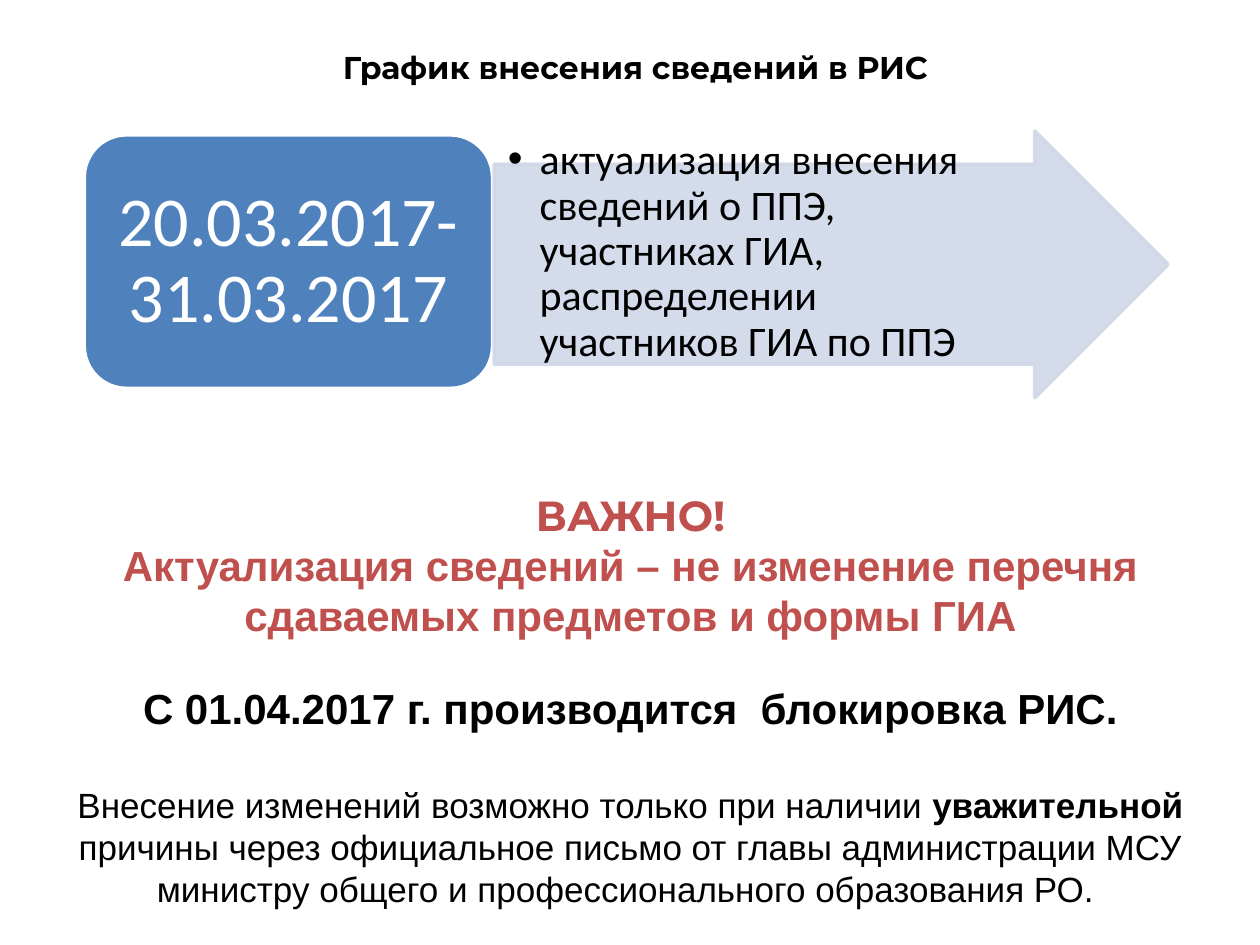
"""Build the slide with the schedule for entering data into the RIS."""
from lxml import etree
from pptx import Presentation
from pptx import util as u
from pptx.dml.color import RGBColor
from pptx.enum import shapes, text
from pptx.oxml import ns

BLACK, WHITE, BLUE, PALE, RED = "000000", "FFFFFF", "4F81BD", "D0D8E8", "C0504D"


def colour(value):
    return RGBColor.from_string(value)


class SlideWriter:
    def __init__(self, deck):
        self.page = deck.slides.add_slide(deck.slide_layouts[5])

    def place(self, box, area):
        box.left, box.top, box.width, box.height = [u.Cm(v) for v in area]

    def frame(self, box, margins, anchor, auto=text.MSO_AUTO_SIZE.NONE):
        frame = box.text_frame
        frame.word_wrap = True
        frame.auto_size = auto
        frame.vertical_anchor = anchor
        (frame.margin_left, frame.margin_top,
         frame.margin_right, frame.margin_bottom) = [u.Cm(v) for v in margins]
        return frame

    def span(self, para, words, size, font="Arial", tint=BLACK, bold=False):
        span = para.add_run()
        span.text = words
        span.font.size = u.Pt(size)
        span.font.name = font
        span.font.bold = bold
        span.font.color.rgb = colour(tint)

    def title(self, words, area):
        box = self.page.shapes.title
        self.place(box, area)
        frame = self.frame(box, (0.25, 0.13, 0.25, 0.13), text.MSO_ANCHOR.TOP)
        para = frame.paragraphs[0]
        para.alignment = text.PP_ALIGN.CENTER
        self.span(para, words, 18, "Montserrat", bold=True)

    def shape(self, kind, area, fill, line, margins, alpha=None):
        box = self.page.shapes.add_shape(kind, *[u.Cm(v) for v in area])
        box.shadow.inherit = False
        box.fill.solid()
        box.fill.fore_color.rgb = colour(fill)
        box.line.color.rgb = colour(line)
        box.line.width = u.Pt(2)
        if alpha:
            for tint in box._element.spPr.iter(ns.qn("a:srgbClr")):
                etree.SubElement(tint, ns.qn("a:alpha"), val=str(alpha * 1000))
        para = self.frame(box, margins, text.MSO_ANCHOR.MIDDLE).paragraphs[0]
        para.line_spacing = 0.9
        return box, para

    def period(self, words, area):
        margins = (0.43, 0.2, 0.43, 0.2)
        box, para = self.shape(shapes.MSO_SHAPE.ROUNDED_RECTANGLE, area, BLUE, WHITE, margins)
        para.alignment = text.PP_ALIGN.CENTER
        self.span(para, words, 40, "Calibri", WHITE)

    def arrow(self, words, area):
        margins = (0.28, 0.05, 1.78, 0.56)
        box, para = self.shape(shapes.MSO_SHAPE.RIGHT_ARROW, area, PALE, PALE, margins, 90)
        box.adjustments[0], box.adjustments[1] = 0.75, 0.5
        para.alignment = text.PP_ALIGN.LEFT
        props = para._p.get_or_add_pPr()
        props.set("marL", str(u.Cm(0.64)))
        props.set("indent", str(-u.Cm(0.64)))
        etree.SubElement(props, ns.qn("a:buFont"), typeface="Arial")
        etree.SubElement(props, ns.qn("a:buChar"), char="•")
        self.span(para, words, 24, "Calibri")

    def notice(self, paragraphs, area):
        box = self.page.shapes.add_textbox(*[u.Cm(v) for v in area])
        frame = self.frame(box, (0.25, 0.13, 0.25, 0.13), text.MSO_ANCHOR.TOP,
                           text.MSO_AUTO_SIZE.SHAPE_TO_FIT_TEXT)
        for index, (gap, spans) in enumerate(paragraphs):
            para = frame.add_paragraph() if index else frame.paragraphs[0]
            para.alignment = text.PP_ALIGN.CENTER
            para.space_before = u.Pt(gap)
            for words, style in spans:
                self.span(para, words, **style)


def main():
    deck = Presentation()
    deck.slide_width, deck.slide_height = u.Cm(25.4), u.Cm(19.05)
    writer = SlideWriter(deck)
    writer.title("График внесения сведений в РИС", (2.31, 0.84, 21, 1.02))
    writer.period("20.03.2017-31.03.2017", (1.7, 2.72, 8.23, 5.11))
    writer.arrow("актуализация внесения сведений о ППЭ, участниках ГИА, "
                 "распределении участников ГИА по ППЭ", (9.96, 2.64, 13.59, 5.38))
    strong = {"size": 24, "bold": True}
    alert = {**strong, "tint": RED}
    plain = {"size": 20}
    writer.notice([
        (0, [("ВАЖНО!", {**alert, "font": "Montserrat"})]),
        (0, [("Актуализация сведений – не изменение перечня "
              "сдаваемых предметов и формы ГИА", alert)]),
        (24, [("С 01.04.2017 г. производится  блокировка РИС.", strong)]),
        (29, [("Внесение изменений возможно только при наличии ", plain),
              ("уважительной", {**plain, "bold": True}),
              (" причины через официальное письмо от главы администрации МСУ "
               "министру общего и профессионального образования РО. ", plain)]),
    ], (0.71, 9.73, 24, 8.81))
    deck.save("out.pptx")


if __name__ == "__main__":
    main()
